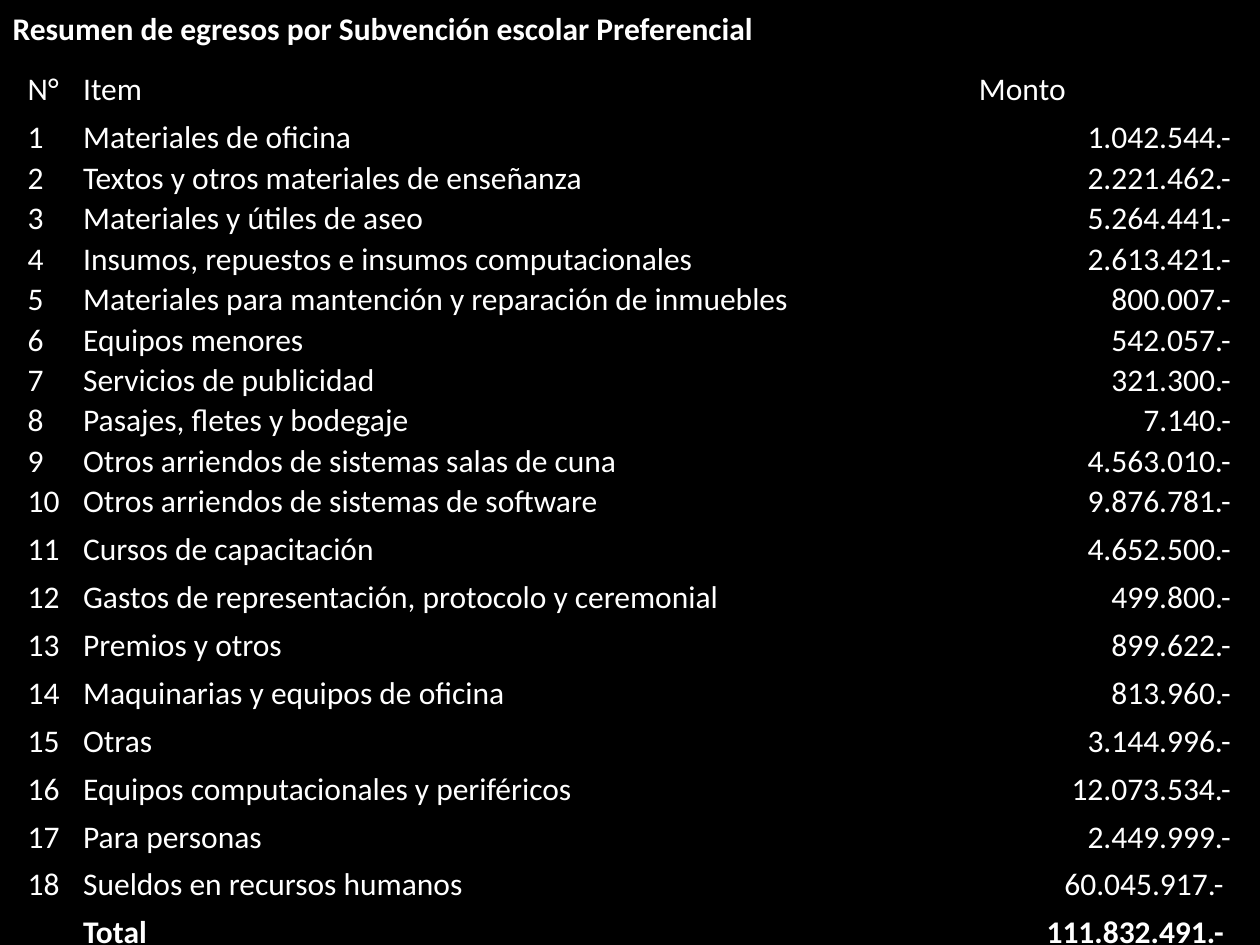
"""Builds the slide that sums up spending from the preferential school subsidy."""
from dataclasses import dataclass

from lxml.etree import SubElement
from pptx import Presentation
from pptx.dml.color import RGBColor
from pptx.enum.text import MSO_ANCHOR as Anchor, MSO_AUTO_SIZE as AutoSize, PP_ALIGN as Align
from pptx.oxml.ns import qn
from pptx.util import Inches, Pt


@dataclass(frozen=True)
class Theme:
    font: str = "Calibri"
    size: int = 18
    background: str = "000000"
    text: str = "FFFFFF"
    border: str = "000000"
    line_spacing: float = 1.07
    space_after: int = 8


HEADINGS = ("N°", "Item", "Monto")
EXPENSES = (
    ("Materiales de oficina", "1.042.544.-"),
    ("Textos y otros materiales de enseñanza", "2.221.462.-"),
    ("Materiales y útiles de aseo", "5.264.441.-"),
    ("Insumos, repuestos e insumos computacionales", "2.613.421.-"),
    ("Materiales para mantención y reparación de inmuebles", "800.007.-"),
    ("Equipos menores", "542.057.-"),
    ("Servicios de publicidad", "321.300.-"),
    ("Pasajes, fletes y bodegaje", "7.140.-"),
    ("Otros arriendos de sistemas salas de cuna", "4.563.010.-"),
    ("Otros arriendos de sistemas de software", "9.876.781.-"),
    ("Cursos de capacitación", "4.652.500.-"),
    ("Gastos de representación, protocolo y ceremonial", "499.800.-"),
    ("Premios y otros", "899.622.-"),
    ("Maquinarias y equipos de oficina", "813.960.-"),
    ("Otras", "3.144.996.-"),
    ("Equipos computacionales y periféricos", "12.073.534.-"),
    ("Para personas", "2.449.999.-"),
    ("Sueldos en recursos humanos", "60.045.917.- "),
)
TOTAL = ("", "Total", "111.832.491.- ")
COLUMN_WIDTHS = (0.44, 7.11, 2.1)
TALL_ROW, SHORT_ROW = 0.38, 0.28
ROW_HEIGHTS = [TALL_ROW] + [SHORT_ROW] * 9 + [TALL_ROW] * 9 + [SHORT_ROW]


class SlideBuilder:
    def __init__(self, deck, theme):
        self.theme = theme
        self.slide = deck.slides.add_slide(deck.slide_layouts[5])
        backdrop = self.slide.background.fill
        backdrop.solid()
        backdrop.fore_color.rgb = RGBColor.from_string(theme.background)

    def set_text(self, frame, text, align=Align.JUSTIFY, bold=False):
        frame.text = text
        paragraph = frame.paragraphs[0]
        paragraph.alignment = align
        paragraph.line_spacing = self.theme.line_spacing
        paragraph.space_before = Pt(0)
        paragraph.space_after = Pt(self.theme.space_after)
        font = paragraph.font
        font.name, font.size, font.bold = self.theme.font, Pt(self.theme.size), bold
        font.color.rgb = RGBColor.from_string(self.theme.text)

    def title(self, text, left, top, width, height):
        heading = self.slide.shapes.title
        heading.left, heading.top = Inches(left), Inches(top)
        heading.width, heading.height = Inches(width), Inches(height)
        frame = heading.text_frame
        frame.word_wrap = True
        frame.auto_size = AutoSize.SHAPE_TO_FIT_TEXT
        frame.vertical_anchor = Anchor.TOP
        self.set_text(frame, text, bold=True)

    def borders(self, cell):
        properties = cell._tc.get_or_add_tcPr()
        for position, side in enumerate(("lnL", "lnR", "lnT", "lnB")):
            edge = SubElement(properties, qn(f"a:{side}"), w=str(Pt(1)))
            fill = SubElement(edge, qn("a:solidFill"))
            SubElement(fill, qn("a:srgbClr"), val=self.theme.border)
            properties.insert(position, edge)

    def table(self, rows, left, top, width, height):
        holder = self.slide.shapes.add_table(
            len(rows), len(COLUMN_WIDTHS),
            Inches(left), Inches(top), Inches(width), Inches(height))
        grid = holder.table
        grid.first_row = grid.horz_banding = False
        for column, column_width in zip(grid.columns, COLUMN_WIDTHS):
            column.width = Inches(column_width)
        for row, row_height in zip(grid.rows, ROW_HEIGHTS):
            row.height = Inches(row_height)
        holder.width, holder.height = Inches(width), Inches(height)
        for r, values in enumerate(rows):
            for c, value in enumerate(values):
                cell = grid.cell(r, c)
                cell.margin_left = cell.margin_right = Inches(0.05)
                cell.margin_top = cell.margin_bottom = 0
                cell.fill.background()
                self.borders(cell)
                is_amount = r > 0 and c == len(values) - 1
                self.set_text(cell.text_frame, value,
                              Align.RIGHT if is_amount else Align.JUSTIFY,
                              bold=r == len(rows) - 1)


def main():
    deck = Presentation()
    deck.slide_width, deck.slide_height = Inches(10), Inches(7.5)
    summary = SlideBuilder(deck, Theme())
    numbered = [(str(n), item, amount) for n, (item, amount) in enumerate(EXPENSES, 1)]
    summary.title("Resumen de egresos por Subvención escolar Preferencial", 0, 0, 9.66, 0.41)
    summary.table([HEADINGS, *numbered, TOTAL], 0.17, 0.54, 9.66, 6.85)
    deck.save("out.pptx")


if __name__ == "__main__":
    main()
